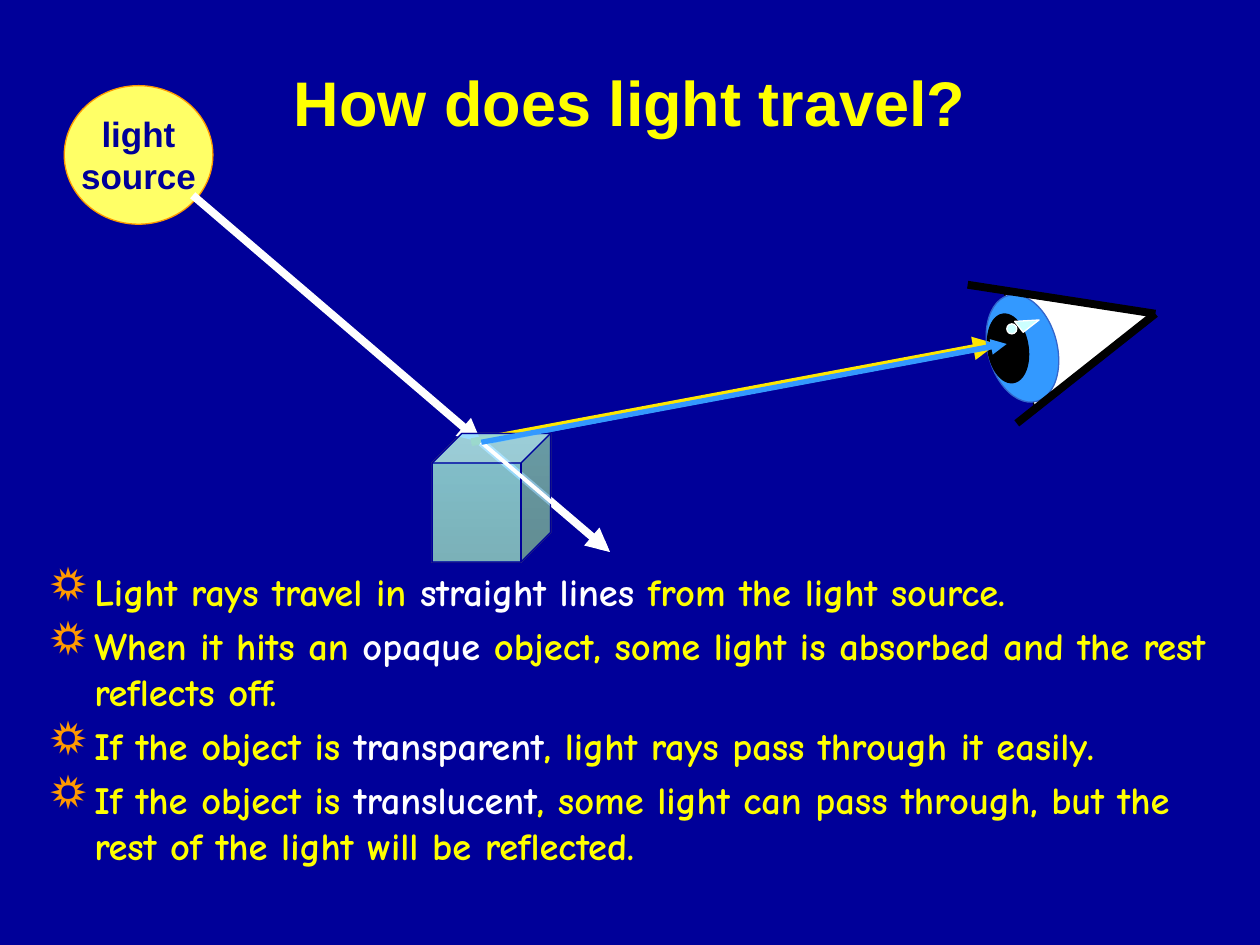
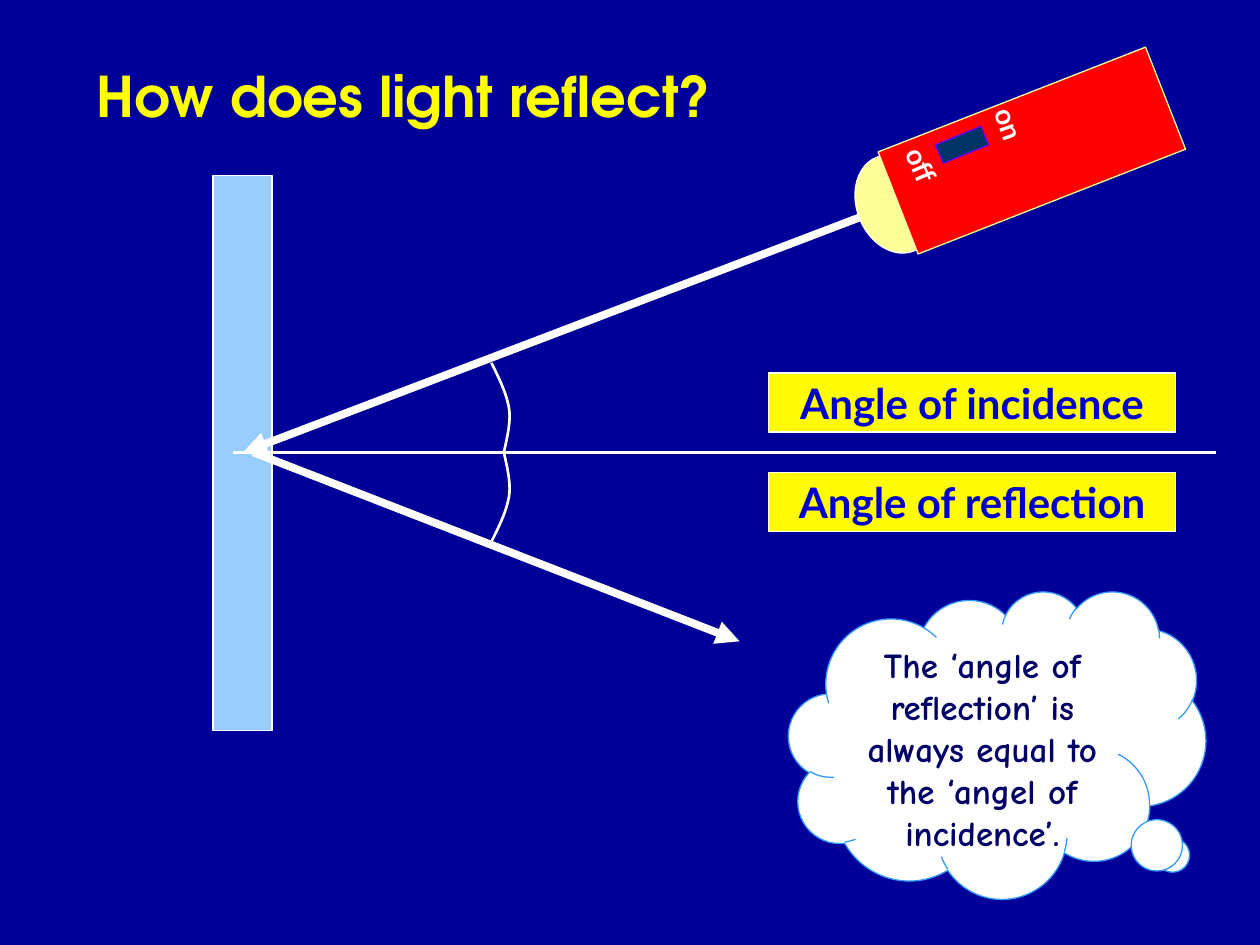
"""Builds two slides on how light travels and how it reflects."""
from dataclasses import dataclass
from typing import Optional, Union

from pptx import Presentation
from pptx.dml.color import RGBColor
from pptx.enum.shapes import MSO_CONNECTOR as Conn, MSO_SHAPE as Geo
from pptx.enum.text import MSO_ANCHOR as Anchor, PP_ALIGN as Align
from pptx.oxml.ns import qn
from pptx.util import Pt
from lxml.etree import SubElement

PX = 9144

NAVY = RGBColor(0x00, 0x00, 0x99)
INK = RGBColor(0x00, 0x00, 0x66)
ROYAL = RGBColor(0x00, 0x00, 0xCC)
YELLOW = RGBColor(0xFF, 0xFF, 0x00)
LABEL_YELLOW = RGBColor(0xFF, 0xFA, 0x06)
GOLD = RGBColor(0xFF, 0xE7, 0x01)
SUN = RGBColor(0xFF, 0xFF, 0x66)
CREAM = RGBColor(0xFF, 0xFF, 0x99)
ORANGE = RGBColor(0xFF, 0x99, 0x00)
RED = RGBColor(0xFF, 0x00, 0x00)
WHITE = RGBColor(0xFF, 0xFF, 0xFF)
BLACK = RGBColor(0x00, 0x00, 0x00)
BLUE = RGBColor(0x33, 0x99, 0xFF)
IRIS_EDGE = RGBColor(0x33, 0x66, 0xCC)
GLINT = RGBColor(0xCC, 0xFF, 0xFF)
MIRROR = RGBColor(0x99, 0xCC, 0xFF)
SWITCH = RGBColor(0x00, 0x33, 0x66)
SWITCH_EDGE = RGBColor(0x66, 0x00, 0xFF)
SKY = RGBColor(0x66, 0xCC, 0xFF)
SKY_MID = RGBColor(0x62, 0xC5, 0xF6)
SKY_DARK = RGBColor(0x5B, 0xB5, 0xE2)

Box = tuple[int, int, int, int]
Point = tuple[int, int]


@dataclass(frozen=True)
class Glass:
    """A see-through fill that shades downwards."""
    top: RGBColor
    bottom: RGBColor
    opacity: int


@dataclass(frozen=True)
class Type:
    """The look of a text."""
    font: str
    size: int
    color: RGBColor
    align: Optional[Align] = None


@dataclass(frozen=True)
class Part:
    """A preset shape, with its text if it has any."""
    geo: Geo
    box: Box
    fill: Union[RGBColor, Glass]
    edge: RGBColor
    turn: float = 0
    adjust: tuple[float, ...] = ()
    text: str = ""
    type: Optional[Type] = None
    anchor: Anchor = Anchor.MIDDLE
    wrap: bool = False


@dataclass(frozen=True)
class Ray:
    """A straight line, with an arrowhead at its end if wanted."""
    start: Point
    end: Point
    color: RGBColor
    width: float
    arrow: bool = True


@dataclass(frozen=True)
class Caption:
    """Text that stands without a shape."""
    text: str
    box: Box
    type: Type
    turn: float = 0
    wrap: bool = False


Item = Union[Part, Ray, Caption]

SOURCE_TYPE = Type("Arial", 20, NAVY, Align.CENTER)
ANGLE_TYPE = Type("Lato", 24, ROYAL, Align.CENTER)
CLOUD_TYPE = Type("Comic Neue", 20, INK, Align.CENTER)
SWITCH_TYPE = Type("Lato", 16, WHITE)
BULLET_TYPE = Type("Comic Neue", 22, YELLOW)

CUBE: Box = (343, 344, 94, 102)
HIT: Point = (382, 351)
EXIT: Point = (484, 438)
EYE_CORNER: Point = (917, 249)
NORMAL_Y = 359
ARC = ((390, 71), (396, 59), (402, 47), (404, 35),
       (406, 23), (401, 6), (400, 0))


def cube(fill: Union[RGBColor, Glass], edge: RGBColor) -> Part:
    """Return one layer of the cube that the light hits."""
    return Part(Geo.CUBE, CUBE, fill, edge, adjust=(0.25,))


def angle_label(top: int, text: str) -> Part:
    """Return a yellow label that names an angle."""
    return Part(Geo.RECTANGLE, (610, top, 323, 47), LABEL_YELLOW, WHITE,
                text=text, type=ANGLE_TYPE)


TRAVEL: list[Item] = [
    Part(Geo.OVAL, (51, 68, 118, 110), SUN, ORANGE,
         text="light\nsource", type=SOURCE_TYPE),
    cube(ORANGE, GOLD),
    Part(Geo.ISOSCELES_TRIANGLE, (816, 209, 94, 111), WHITE, BLACK, 75.2),
    Part(Geo.OVAL, (784, 233, 55, 87), BLUE, IRIS_EDGE, 345.3),
    Part(Geo.OVAL, (784, 249, 32, 55), BLACK, BLACK, 351.2),
    Part(Geo.RIGHT_TRIANGLE, (807, 249, 16, 11), GLINT, WHITE, 322.1),
    Ray(EYE_CORNER, (768, 226), BLACK, 4.5, False),
    Ray(EYE_CORNER, (807, 336), BLACK, 4.5, False),
    Ray((153, 155), HIT, WHITE, 4.5),
    Ray((374, 351), (791, 273), GOLD, 4.5),
    Part(Geo.OVAL, (799, 257, 8, 8), GLINT, WHITE),
    cube(Glass(SKY, SKY_MID, 40), NAVY),
    Ray(HIT, EXIT, WHITE, 4.5),
    Ray((390, 351), (791, 273), BLUE, 1.5),
    cube(Glass(SKY, SKY_DARK, 67), NAVY),
    Ray(HIT, EXIT, WHITE, 2.25),
    Ray(HIT, (799, 273), BLUE, 3),
]

FACTS = [
    ("Light rays travel in ", "straight lines", " from the light source."),
    ("When it hits an ", "opaque",
     " object, some light is absorbed and the rest reflects off."),
    ("If the object is ", "transparent",
     ", light rays pass through it easily."),
    ("If the object is ", "translucent",
     ", some light can pass through, but the rest of the light will be reflected."),
]

REFLECT: list[Item] = [
    Part(Geo.RECTANGLE, (169, 139, 47, 441), MIRROR, WHITE),
    Ray((689, 170), (193, NORMAL_Y), WHITE, 4.5),
    Ray((201, NORMAL_Y), (587, 509), WHITE, 4.5),
    Ray((185, NORMAL_Y), (965, NORMAL_Y), WHITE, 1.5, False),
    angle_label(296, "Angle of incidence"),
    angle_label(375, "Angle of reflection"),
    Part(Geo.CLOUD_CALLOUT, (626, 469, 331, 244), WHITE, BLUE,
         adjust=(0.423, 0.362), type=CLOUD_TYPE, anchor=Anchor.TOP, wrap=True,
         text="The ‘angle of reflection’ is always equal to the ‘angel of incidence’."),
]

TORCH: list[Item] = [
    Part(Geo.OVAL, (680, 122, 61, 80), CREAM, WHITE, 338.6),
    Part(Geo.RECTANGLE, (705, 76, 228, 87), RED, CREAM, 338.6),
    Part(Geo.RECTANGLE, (744, 107, 39, 16), SWITCH, SWITCH_EDGE, 337.8),
    Caption("on", (777, 82, 49, 37), SWITCH_TYPE, 70.9),
    Caption("off", (707, 113, 49, 37), SWITCH_TYPE, 66.7),
]


def emu(*lengths: float) -> list[int]:
    """Turn px into EMU."""
    return [round(length * PX) for length in lengths]


def style(paragraph, look: Type) -> None:
    """Give a paragraph its font and alignment."""
    font = paragraph.font
    font.name, font.size, font.bold = look.font, Pt(look.size), True
    font.color.rgb = look.color
    if look.align is not None:
        paragraph.alignment = look.align


def write(frame, text: str, look: Type, anchor: Anchor, wrap: bool) -> None:
    """Fill a text frame, one paragraph a line."""
    frame.text = text
    frame.word_wrap = wrap
    frame.vertical_anchor = anchor
    for paragraph in frame.paragraphs:
        style(paragraph, look)


def draw_part(shapes, part: Part) -> None:
    """Draw a preset shape."""
    shape = shapes.add_shape(part.geo, *emu(*part.box))
    shape.shadow.inherit = False
    shape.rotation = part.turn
    for index, value in enumerate(part.adjust):
        shape.adjustments[index] = value
    if isinstance(part.fill, Glass):
        shape.fill.gradient()
        shape.fill.gradient_angle = 270
        for stop, color in zip(shape.fill.gradient_stops,
                               (part.fill.top, part.fill.bottom)):
            stop.color.rgb = color
        for color in shape._element.spPr.xpath(".//a:gs/a:srgbClr"):
            SubElement(color, qn("a:alpha"), val=str(part.fill.opacity * 1000))
    else:
        shape.fill.solid()
        shape.fill.fore_color.rgb = part.fill
    shape.line.color.rgb = part.edge
    shape.line.width = Pt(0.75)
    if part.type:
        write(shape.text_frame, part.text, part.type, part.anchor, part.wrap)


def draw_ray(shapes, ray: Ray) -> None:
    """Draw a line or an arrow."""
    line = shapes.add_connector(Conn.STRAIGHT, *emu(*ray.start, *ray.end))
    line.line.color.rgb = ray.color
    line.line.width = Pt(ray.width)
    if ray.arrow:
        SubElement(line.line._get_or_add_ln(), qn("a:tailEnd"), type="triangle")
    SubElement(line._element.spPr, qn("a:effectLst"))


def draw_caption(shapes, caption: Caption, anchor: Anchor = Anchor.TOP) -> None:
    """Draw text without a shape."""
    box = shapes.add_textbox(*emu(*caption.box))
    box.rotation = caption.turn
    write(box.text_frame, caption.text, caption.type, anchor, caption.wrap)


def draw(shapes, items: list[Item]) -> None:
    """Draw items from back to front."""
    painters = {Part: draw_part, Ray: draw_ray, Caption: draw_caption}
    for item in items:
        painters[type(item)](shapes, item)


def draw_facts(shapes) -> None:
    """Draw the bulleted facts, each with its key word in white."""
    frame = shapes.add_textbox(*emu(27, 446, 953, 276)).text_frame
    frame.word_wrap = True
    for index, fact in enumerate(FACTS):
        paragraph = frame.paragraphs[0] if index == 0 else frame.add_paragraph()
        props = paragraph._p.get_or_add_pPr()
        hang = emu(38)[0]
        props.set("marL", str(hang))
        props.set("indent", str(-hang))
        SubElement(SubElement(props, qn("a:buClr")), qn("a:srgbClr"), val=str(ORANGE))
        SubElement(props, qn("a:buSzPct"), val="130000")
        SubElement(props, qn("a:buChar"), char="☼")
        style(paragraph, BULLET_TYPE)
        if index:
            paragraph.space_before = Pt(4.4)
        for words, color in zip(fact, (YELLOW, WHITE, YELLOW)):
            run = paragraph.add_run()
            run.text = words
            run.font.color.rgb = color


def draw_arc(shapes, side: int) -> None:
    """Draw an angle mark below (1) or above (-1) the normal."""
    points = [(x, NORMAL_Y + side * y) for x, y in ARC]
    curve = [points[0]]
    for first in (0, 3):
        a, b, c, d = points[first:first + 4]
        for step in range(1, 13):
            t = step / 12
            weights = ((1 - t) ** 3, 3 * t * (1 - t) ** 2, 3 * t * t * (1 - t), t ** 3)
            curve.append(tuple(sum(w * p[axis] for w, p in zip(weights, (a, b, c, d)))
                               for axis in (0, 1)))
    builder = shapes.build_freeform(*emu(*curve[0]))
    builder.add_line_segments([emu(*point) for point in curve[1:]], close=False)
    arc = builder.convert_to_shape()
    arc.shadow.inherit = False
    arc.fill.background()
    arc.line.color.rgb = WHITE
    arc.line.width = Pt(1.5)


def add_slide(deck, title: str, box: Box, look: Type):
    """Add a navy slide with its title and return its shapes."""
    slide = deck.slides.add_slide(deck.slide_layouts[6])
    slide.background.fill.solid()
    slide.background.fill.fore_color.rgb = NAVY
    draw_caption(slide.shapes, Caption(title, box, look, wrap=True), Anchor.MIDDLE)
    return slide.shapes


def main() -> None:
    """Build and save the deck."""
    deck = Presentation()
    deck.slide_width, deck.slide_height = emu(1000, 750)
    travel = add_slide(deck, "How does light travel?", (50, 30, 900, 101),
                       Type("Arial", 36, YELLOW, Align.CENTER))
    draw_facts(travel)
    draw(travel, TRAVEL)
    reflect = add_slide(deck, "How does light reflect?", (67, 28, 520, 95),
                        Type("TeX Gyre Adventor", 32, YELLOW))
    draw(reflect, REFLECT)
    for side in (1, -1):
        draw_arc(reflect, side)
    draw(reflect.add_group_shape().shapes, TORCH)
    deck.save("out.pptx")


if __name__ == "__main__":
    main()
